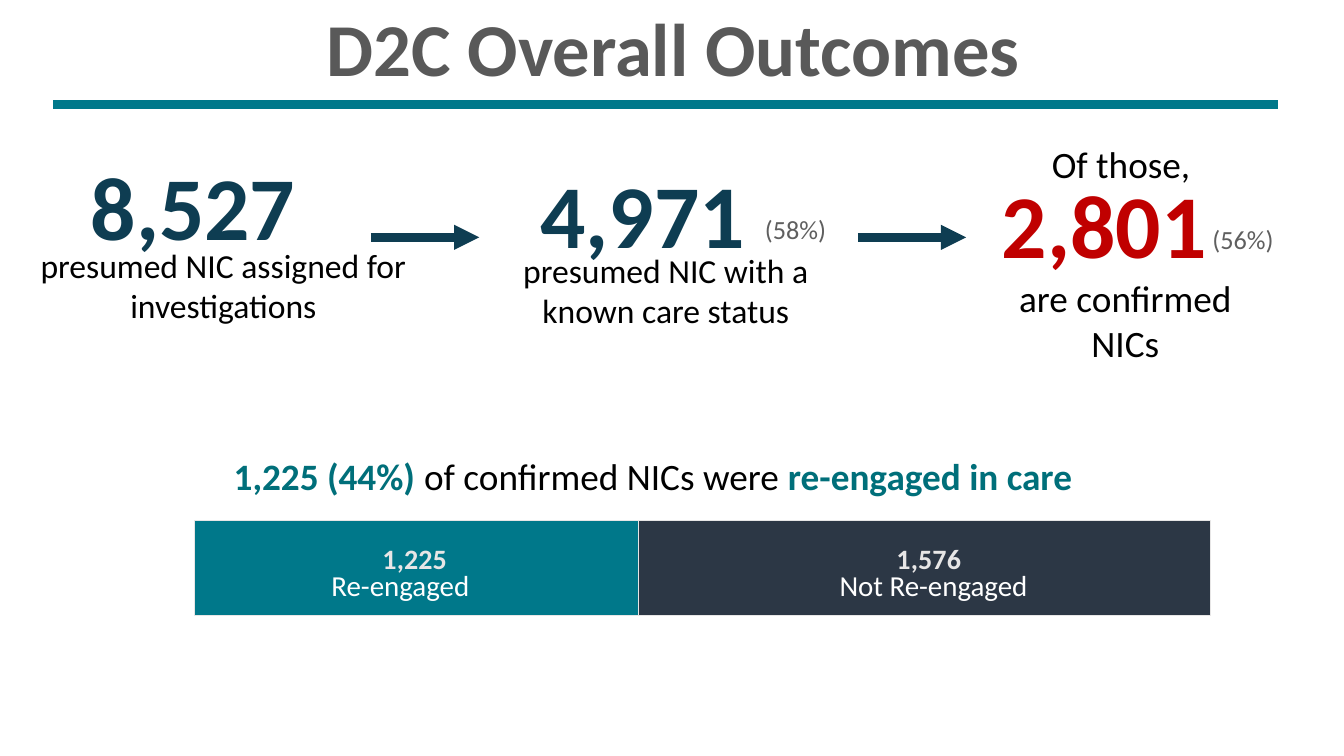
from lxml import etree
from pptx import Presentation
from pptx import util as u
from pptx.chart import data as chart_data
from pptx.dml.color import RGBColor
from pptx.enum import chart as ch, shapes, text
from pptx.oxml import parse_xml
from pptx.oxml.ns import nsdecls, qn

COLUMNS, ROWS = 133.33, 75
CELL = u.Inches(7.5) / ROWS
FONT = "Calibri"
TEAL = RGBColor(0x00, 0x78, 0x8A)
DEEP_TEAL = RGBColor(0x00, 0x6F, 0x7A)
NAVY = RGBColor(0x0E, 0x3D, 0x52)
SLATE = RGBColor(0x2C, 0x37, 0x45)
RED = RGBColor(0xC0, 0x00, 0x00)
BLACK = RGBColor(0x00, 0x00, 0x00)
WHITE = RGBColor(0xFF, 0xFF, 0xFF)
PALE = RGBColor(0xE7, 0xE6, 0xE6)
GREY = RGBColor(0x5F, 0x5F, 0x5F)
TITLE_GREY = RGBColor(0x59, 0x59, 0x59)
LEFT, CENTER = text.PP_ALIGN.LEFT, text.PP_ALIGN.CENTER


def grid(*cells):
    """Turn grid cells into slide lengths."""
    return [u.Emu(round(c * CELL)) for c in cells]


def set_font(font, size, color, bold=False):
    """Set typeface, size, colour and weight of a font."""
    font.name, font.size, font.bold = FONT, u.Pt(size), bold
    font.color.rgb = color


def add_text(s, box, lines, size, color, bold=False, align=CENTER):
    """Add a wrapped text box with one paragraph per line."""
    tf = s.shapes.add_textbox(*grid(*box)).text_frame
    tf.word_wrap = True
    for i, line in enumerate(lines):
        p = tf.paragraphs[0] if i == 0 else tf.add_paragraph()
        p.text, p.alignment = line, align
        set_font(p.font, size, color, bold)
    return tf


def add_rule(s, x, y, w, color, weight, arrow=False):
    """Add a horizontal line, with an arrowhead at its right end if asked."""
    line = s.shapes.add_connector(
        shapes.MSO_CONNECTOR.STRAIGHT, *grid(x, y, x + w, y))
    line.line.color.rgb, line.line.width = color, u.Pt(weight)
    if arrow:
        etree.SubElement(line.line._get_or_add_ln(), qn("a:tailEnd"), type="triangle")
    etree.SubElement(line._element.spPr, qn("a:effectLst"))


def add_heading(s, x, y, w, title):
    """Place the slide title above a full-width rule."""
    tf = add_text(s, (x + 1.5, y, w - 1.5, 8.3), [title], 53.3, TITLE_GREY, True)
    tf.vertical_anchor = text.MSO_ANCHOR.BOTTOM
    tf.paragraphs[0].line_spacing = u.Pt(30)
    add_rule(s, x, y + 9.1, w, TEAL, 6.25)


def add_stat(s, x, y, number, color, caption, lines, size=24, share=None):
    """Place a large figure with its caption and optional percentage."""
    dx, dy, w, h = caption
    tf = add_text(s, (x + dx, y + dy, w, h), lines, size, BLACK)
    for p in tf.paragraphs[1:]:
        p.space_before = u.Pt(64)
    add_text(s, (x, y, 37.5, 9), [number], 64, color, True)
    if share:
        label, offset = share
        add_text(s, (x + offset, y + 5.4, 9, 4.2), [label], 18.7, GREY, align=LEFT)


def manual_layout(settings):
    """Return a chart layout element with the given settings."""
    items = "".join(f'<c:{name} val="{value}"/>' for name, value in settings.items())
    return parse_xml(f'<c:layout {nsdecls("c")}><c:manualLayout>{items}'
                     '</c:manualLayout></c:layout>')


def raise_label(series, dx, dy):
    """Shift the value label of a bar by shares of the chart's size."""
    label = series.points[0].data_label
    set_font(label.font, 20, PALE, True)
    idx = label._get_or_add_dLbl().find(qn("c:idx"))
    idx.addnext(parse_xml(
        f'<c:numFmt {nsdecls("c")} formatCode="#,##0" sourceLinked="0"/>'))
    idx.addnext(manual_layout({"x": dx, "y": dy}))


def add_outcome_chart(s, x, y, w, h):
    """Place the stacked bar of re-engaged and other clients."""
    data = chart_data.CategoryChartData(number_format="#,##0")
    data.categories = ["1"]
    data.add_series("Series 1", [1225])
    data.add_series("Series 2", [1576])
    chart = s.shapes.add_chart(
        ch.XL_CHART_TYPE.BAR_STACKED_100, *grid(x, y, w, h), data).chart
    chart.has_legend = chart.has_title = False
    set_font(chart.font, 10, BLACK)
    for axis in (chart.category_axis, chart.value_axis):
        axis.visible = axis.has_major_gridlines = False
    plot = chart.plots[0]
    plot.gap_width, plot.overlap, plot.vary_by_categories = 114, 100, False
    for series, color, shift in zip(plot.series, (TEAL, SLATE), (-0.002, 0.004)):
        series.format.fill.solid()
        series.format.fill.fore_color.rgb = color
        series.format.line.color.rgb = PALE
        series.format.line.width = u.Pt(0.75)
        labels = series.data_labels
        labels.show_value = True
        labels.number_format, labels.number_format_is_linked = "#,##0", False
        set_font(labels.font, 20, PALE, True)
        raise_label(series, shift, -0.04)
    area = chart._chartSpace.chart.plotArea
    for old in area.findall(qn("c:layout")):
        area.remove(old)
    area.insert(0, manual_layout({
        "layoutTarget": "inner", "xMode": "edge", "yMode": "edge",
        "x": 0.023, "y": 0.083, "w": 0.954, "h": 0.917}))


def add_outcome(s, x, y, w, h):
    """Place the re-engagement sentence, bar and segment names."""
    tf = add_text(s, (x + 5.3, y + 0.1, 95, 5.3), [""], 26.67, BLACK, align=LEFT)
    for words, color, bold in (("1,225 (44%) ", DEEP_TEAL, True),
                               ("of confirmed NICs were ", BLACK, False),
                               ("re-engaged in care", DEEP_TEAL, True)):
        r = tf.paragraphs[0].add_run()
        r.text = words
        set_font(r.font, 26.67, color, bold)
    add_outcome_chart(s, x, y, w, h)
    for name, dx, width in (("Re-engaged", 15, 20.4), ("Not Re-engaged", 65.4, 22.8)):
        add_text(s, (x + dx, y + 11.45, width, 4.5), [name], 20.7, WHITE, align=LEFT)


def main():
    """Build and save the outcomes slide."""
    prs = Presentation()
    prs.slide_width, prs.slide_height = grid(COLUMNS, ROWS)
    s = prs.slides.add_slide(prs.slide_layouts[6])
    add_heading(s, 5.3, 1.3, 121.5, "D2C Overall Outcomes")
    add_stat(s, 0.4, 14.5, "8,527", NAVY, (2, 9.3, 39.5, 12.9),
             ["presumed NIC assigned for investigations"])
    add_stat(s, 45, 15.3, "4,971", NAVY, (4.2, 9, 33.7, 9.9),
             ["presumed NIC with a known care status"], share=("(58%)", 29.9))
    add_stat(s, 90.8, 16.3, "2,801", RED, (6, -2.8, 29.7, 18.2),
             ["Of those, ", "are confirmed NICs"], 26.67, ("(56%)", 28.5))
    for x in (36.8, 85.1):
        add_rule(s, x, 23.55, 10.75, NAVY, 6, arrow=True)
    add_outcome(s, 16.9, 44.4, 105.6, 22.1)
    prs.save("out.pptx")


if __name__ == "__main__":
    main()
